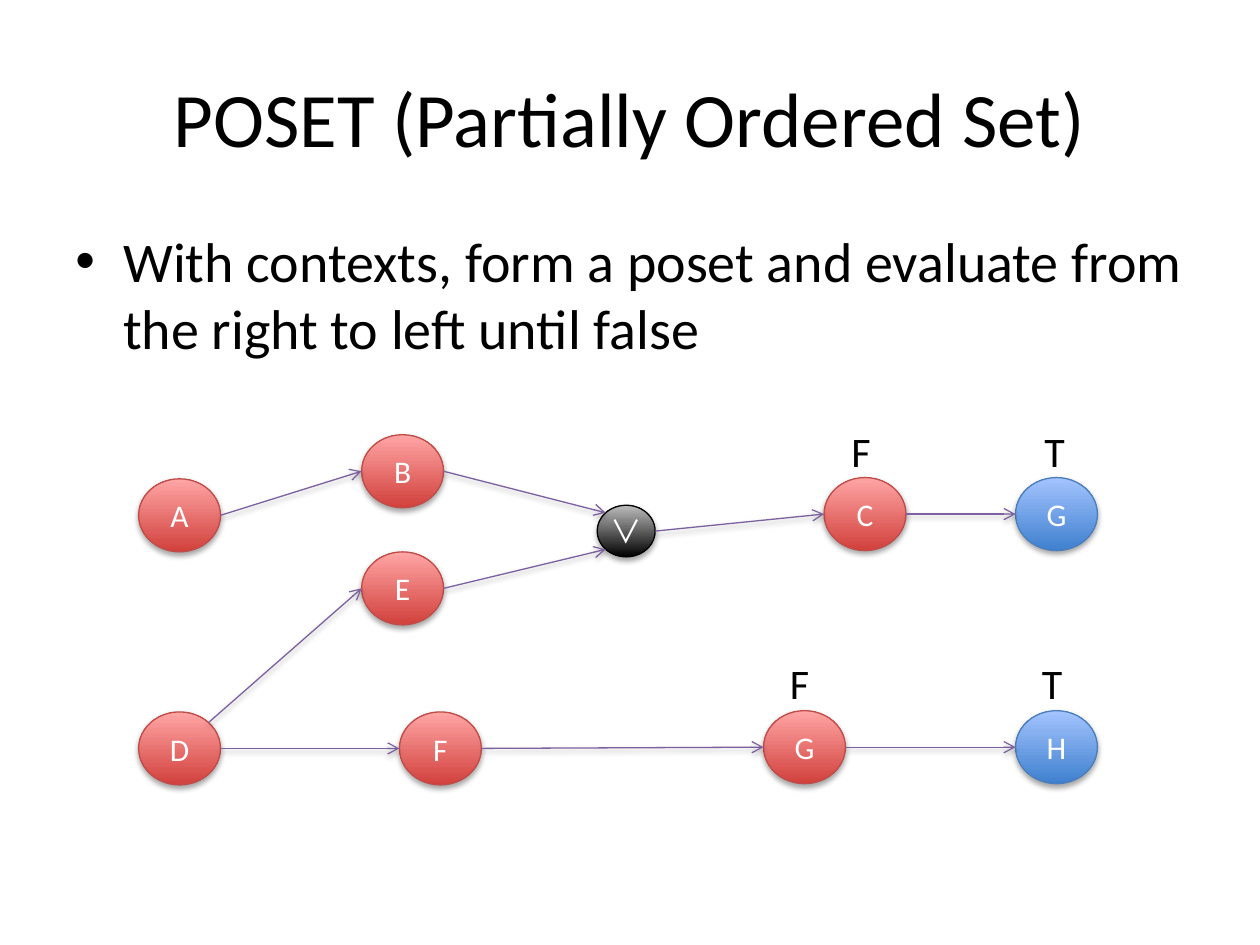
from math import sqrt

from lxml.etree import SubElement
from pptx import Presentation
from pptx.dml.color import RGBColor
from pptx.enum.shapes import MSO_CONNECTOR, MSO_SHAPE
from pptx.enum.text import MSO_ANCHOR, MSO_AUTO_SIZE, PP_ALIGN
from pptx.oxml import parse_xml
from pptx.oxml.ns import nsdecls, qn
from pptx.util import Inches, Pt

COLORS = {"text": "000000", "label": "FFFFFF", "edge": "7D60A0"}
# bottom colour, top colour, outline
STYLES = {
    "red": ("D1403C", "FFA6A5", "BF4C48"),
    "blue": ("3F80CE", "A4C4FF", "4B7EBC"),
    "black": ("000000", "BDBDBD", "000000"),
}
FONT = "Calibri"
SYMBOL_FONT = "Noto Sans CJK JP"
NODE_SIZE = (0.65, 0.58)
OR_SIZE = (0.46, 0.41)

# key: left, top, label, style
NODES = {
    "A": (1.1, 3.8, "A", "red"),
    "B": (2.87, 3.45, "B", "red"),
    "C": (6.54, 3.79, "C", "red"),
    "E": (2.87, 4.38, "E", "red"),
    "D": (1.1, 5.65, "D", "red"),
    "F": (3.17, 5.65, "F", "red"),
    "G": (6.06, 5.64, "G", "red"),
    "H": (8.06, 5.64, "H", "blue"),
    "G end": (8.06, 3.79, "G", "blue"),
    "or": (4.74, 4.01, "∨", "black"),
}
# from node, side, to node, side
EDGES = [
    ("A", "right", "B", "left"),
    ("D", "top right", "E", "left"),
    ("B", "right", "or", "top left"),
    ("D", "right", "F", "left"),
    ("E", "right", "or", "bottom left"),
    ("F", "right", "G", "left"),
    ("G", "right", "H", "left"),
    ("C", "right", "G end", "left"),
    ("or", "right", "C", "left"),
]
DIAGONAL = sqrt(0.5)
SIDES = {
    "left": (-1, 0),
    "right": (1, 0),
    "top left": (-DIAGONAL, -DIAGONAL),
    "top right": (DIAGONAL, -DIAGONAL),
    "bottom left": (-DIAGONAL, DIAGONAL),
}
TRUTH_VALUES = [("T", 8.19, 3.33), ("F", 6.66, 3.33), ("T", 8.17, 5.17), ("F", 6.17, 5.17)]


def rgb(value):
    return RGBColor.from_string(value)


def add_shadow(sp):
    """Give a shape or connector the soft shadow below it."""
    sp._element.spPr.append(parse_xml(
        f'<a:effectLst {nsdecls("a")}>'
        '<a:outerShdw blurRad="40000" dist="23000" dir="5400000" rotWithShape="0">'
        '<a:srgbClr val="000000"><a:alpha val="35000"/></a:srgbClr>'
        '</a:outerShdw></a:effectLst>'))


def set_text(sp, text, size, color, font=FONT, align=PP_ALIGN.LEFT, **frame):
    """Write one paragraph; frame holds text frame attributes."""
    tf = sp.text_frame
    for name, value in frame.items():
        setattr(tf, name, value)
    p = tf.paragraphs[0]
    p.alignment = align
    r = p.add_run()
    r.text = text
    for name, value in {"name": font, "size": Pt(size)}.items():
        setattr(r.font, name, value)
    r.font.color.rgb = rgb(color)
    SubElement(r.font._element, qn("a:ea")).set("typeface", font)
    return p


def add_text(s, box, text, size, **options):
    sp = s.shapes.add_textbox(*map(Inches, box))
    return set_text(sp, text, size, COLORS["text"], **options)


def add_bullet(p, indent):
    p.space_before = Pt(6.4)
    pPr = p._p.get_or_add_pPr()
    pPr.set("marL", str(Inches(indent)))
    pPr.set("indent", str(-Inches(indent)))
    SubElement(pPr, qn("a:buFont")).set("typeface", "Arial")
    SubElement(pPr, qn("a:buChar")).set("char", "•")


def node_size(key):
    return OR_SIZE if key == "or" else NODE_SIZE


def add_node(s, key):
    left, top, label, style = NODES[key]
    bottom_color, top_color, outline = STYLES[style]
    box = (left, top, *node_size(key))
    sp = s.shapes.add_shape(MSO_SHAPE.OVAL, *map(Inches, box))
    sp.fill.gradient()
    sp.fill.gradient_angle = 90
    for stop, color in zip(sp.fill.gradient_stops, (bottom_color, top_color)):
        stop.color.rgb = rgb(color)
    sp.line.color.rgb = rgb(outline)
    sp.line.width = Pt(0.75)
    add_shadow(sp)
    frame = {"vertical_anchor": MSO_ANCHOR.MIDDLE, "word_wrap": True}
    if key == "or":
        frame.update(font=SYMBOL_FONT, margin_left=0, margin_right=0)
    set_text(sp, label, 18, COLORS["label"], align=PP_ALIGN.CENTER, **frame)


def side_point(key, side):
    """Point on the node's outline at the named side."""
    left, top = NODES[key][:2]
    width, height = node_size(key)
    dx, dy = SIDES[side]
    return Inches(left + width * (1 + dx) / 2), Inches(top + height * (1 + dy) / 2)


def add_edge(s, start, start_side, end, end_side):
    line = s.shapes.add_connector(
        MSO_CONNECTOR.STRAIGHT, *side_point(start, start_side), *side_point(end, end_side))
    line.line.color.rgb = rgb(COLORS["edge"])
    line.line.width = Pt(0.75)
    SubElement(line.line._get_or_add_ln(), qn("a:tailEnd")).set("type", "arrow")
    add_shadow(line)


def main():
    prs = Presentation()
    prs.slide_width, prs.slide_height = Inches(10), Inches(7.5)
    s = prs.slides.add_slide(prs.slide_layouts[6])

    add_text(s, (0.5, 0.3, 9, 1.25), "POSET (Partially Ordered Set)", 44,
             align=PP_ALIGN.CENTER, word_wrap=True, vertical_anchor=MSO_ANCHOR.MIDDLE)
    p = add_text(s, (0.5, 1.75, 9, 4.95),
                 "With contexts, form a poset and evaluate from the right to left until false",
                 32, word_wrap=True)
    add_bullet(p, 0.38)

    for key in NODES:
        add_node(s, key)
    for edge in EDGES:
        add_edge(s, *edge)
    for value, left, top in TRUTH_VALUES:
        add_text(s, (left, top, 0.37, 0.5), value, 24,
                 word_wrap=False, auto_size=MSO_AUTO_SIZE.SHAPE_TO_FIT_TEXT)

    prs.save("out.pptx")


if __name__ == "__main__":
    main()
